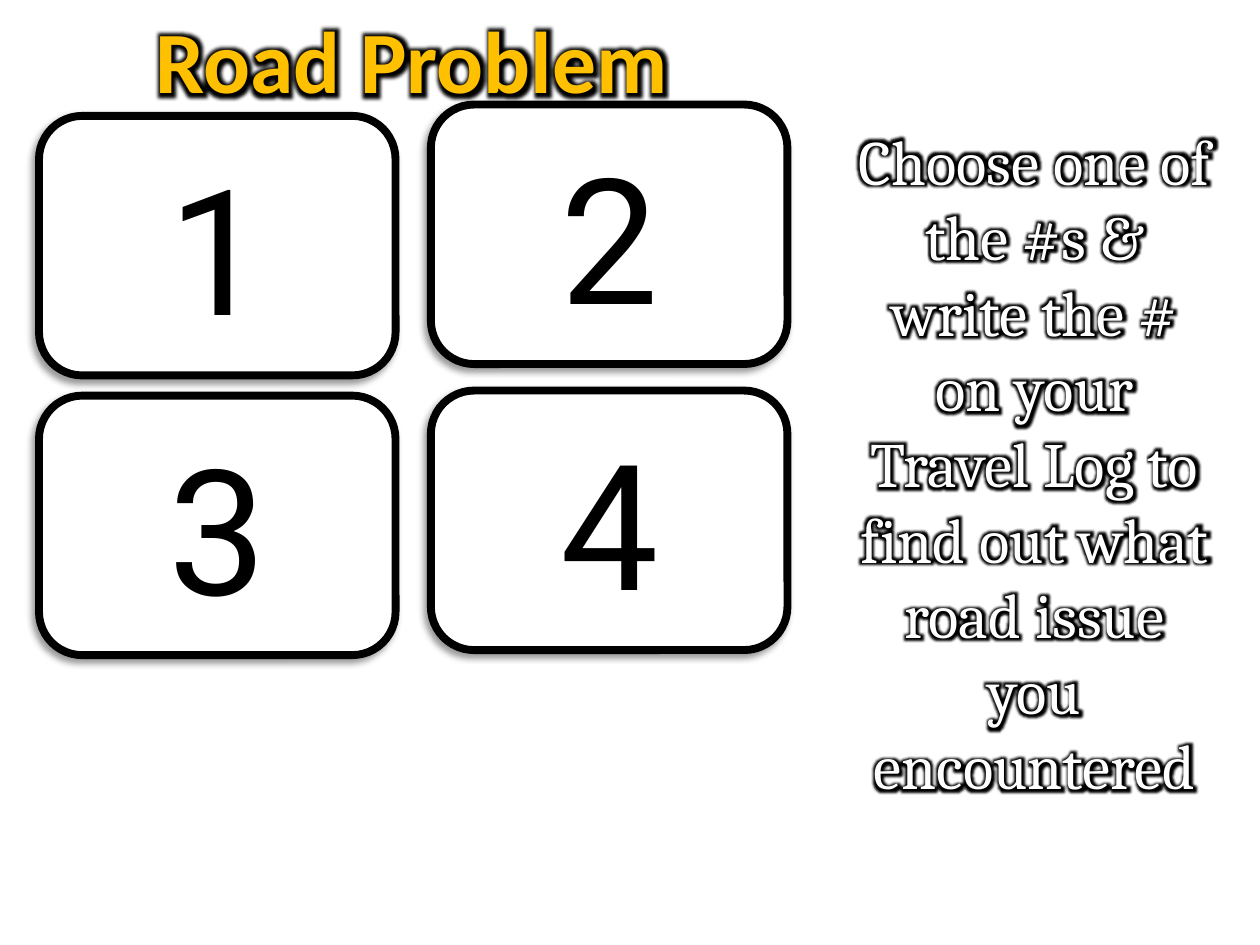
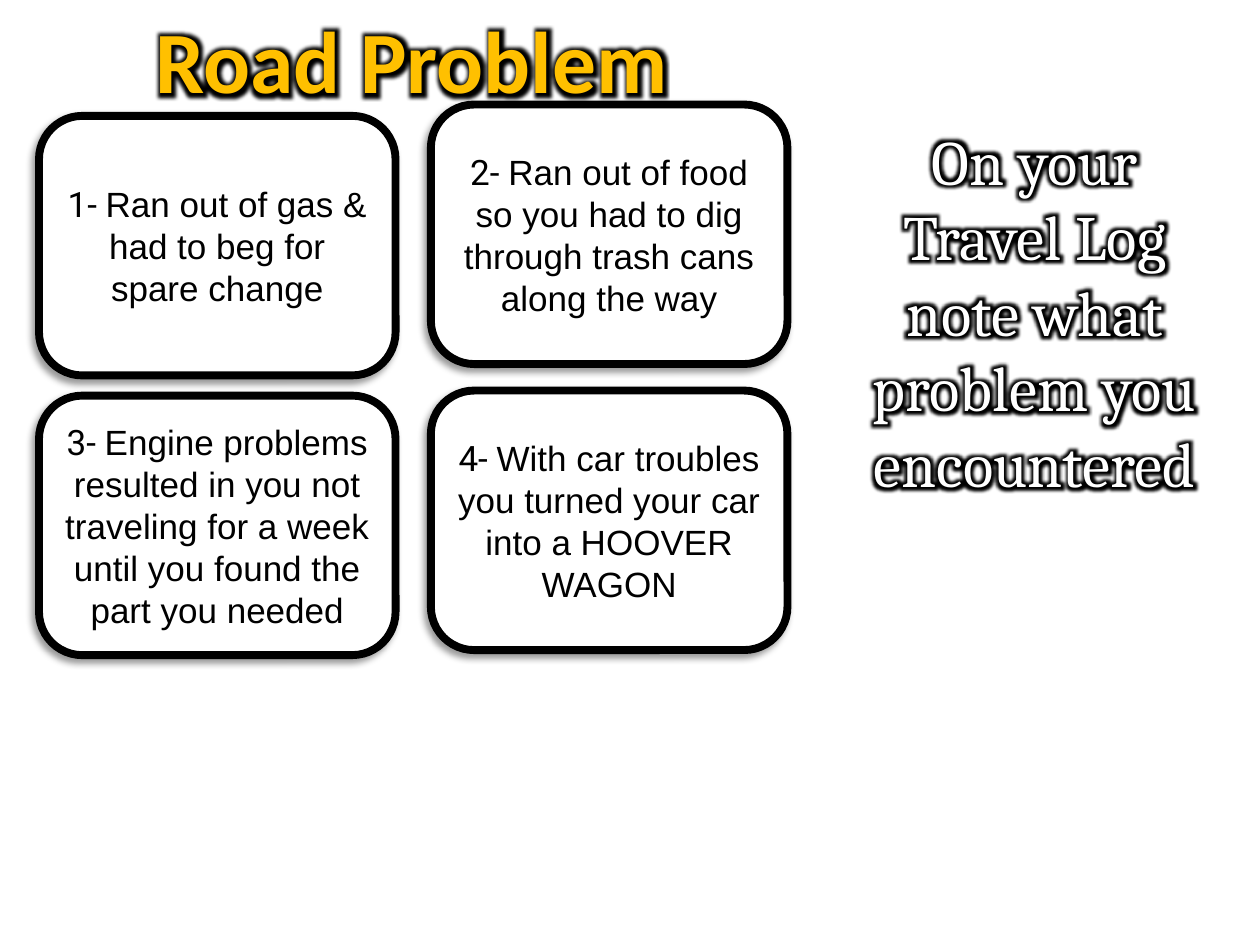
"""Build the two Road Problem slides: four cards and a side note on each."""
import pptx
import pptx.util
import pptx.dml.color
import pptx.enum.shapes
import pptx.enum.text
import pptx.oxml
import pptx.oxml.ns

TITLE = "Road Problem"
PAGES = [
    {
        "cards": [[(str(num), "Roboto")] for num in range(1, 5)],
        "size": 100,
        "note": "Choose one of the #s & write the # on your Travel Log "
                "to find out what road issue you encountered",
        "tall": 4.95,
    },
    {
        "cards": [[(f"{num}- ", "Roboto"), (text, "Arial")] for num, text in enumerate([
            "Ran out of gas & had to beg for spare change",
            "Ran out of food so you had to dig through trash cans along the way",
            "Engine problems resulted in you not traveling for a week "
            "until you found the part you needed",
            "With car troubles you turned your car into a HOOVER WAGON",
        ], 1)],
        "size": 20,
        "note": "On your Travel Log note what problem you encountered",
        "tall": 3.13,
    },
]

BLACK, WHITE, GOLD = "000000", "FFFFFF", "FFC000"
COLS = [0.31, 3.42]
ROWS = [[0.92, 0.83], [3.14, 3.1]]
CARD = (2.83, 2.06)
NOTE = (6.67, 0.92, 3.08)
HEAD = (0.79, 0, 4.96, 0.94)
GLOW = '<a:glow rad="101600">{}</a:glow>'
SHADE = '<a:outerShdw blurRad="50800" dist="38100" dir="8100000" rotWithShape="0">{}</a:outerShdw>'


def color(code):
    return pptx.dml.color.RGBColor.from_string(code)


def effect(form, alpha):
    ink = f'<a:srgbClr val="{BLACK}"><a:alpha val="{alpha * 1000}"/></a:srgbClr>'
    space = pptx.oxml.ns.nsdecls("a")
    return pptx.oxml.parse_xml(f"<a:effectLst {space}>{form.format(ink)}</a:effectLst>")


def place(shape, *box):
    shape.left, shape.top, shape.width, shape.height = map(pptx.util.Inches, box)


def write(shape, runs, size, code, bold=False, glow=False):
    para = shape.text_frame.paragraphs[0]
    para.alignment = pptx.enum.text.PP_ALIGN.CENTER
    for text, face in runs:
        run = para.add_run()
        run.text = text
        font = run.font
        font.size, font.name, font.bold = pptx.util.Pt(size), face, bold
        font.color.rgb = color(code)
        if glow:
            fill = run._r.rPr.find(pptx.oxml.ns.qn("a:solidFill"))
            fill.addnext(effect(GLOW, 100))


def fit(shape, wrap):
    frame = shape.text_frame
    frame.word_wrap = wrap
    frame.auto_size = pptx.enum.text.MSO_AUTO_SIZE.SHAPE_TO_FIT_TEXT
    frame.vertical_anchor = pptx.enum.text.MSO_ANCHOR.TOP


def add_card(slide, spot, runs, size):
    row, col = divmod(spot, len(COLS))
    box = map(pptx.util.Inches, (COLS[col], ROWS[row][col], *CARD))
    card = slide.shapes.add_shape(pptx.enum.shapes.MSO_SHAPE.ROUNDED_RECTANGLE, *box)
    card.fill.solid()
    card.fill.fore_color.rgb = color(WHITE)
    card.line.color.rgb = color(BLACK)
    card.line.width = pptx.util.Pt(4.5)
    card.element.spPr.append(effect(SHADE, 40))
    card.text_frame.word_wrap = True
    card.text_frame.vertical_anchor = pptx.enum.text.MSO_ANCHOR.MIDDLE
    write(card, runs, size, BLACK)


def add_page(deck, page):
    slide = deck.slides.add_slide(deck.slide_layouts[5])
    for spot, runs in enumerate(page["cards"]):
        add_card(slide, spot, runs, page["size"])
    note = slide.shapes.add_textbox(*map(pptx.util.Inches, (*NOTE, page["tall"])))
    fit(note, True)
    write(note, [(page["note"], "Cambria")], 36, WHITE, glow=True)
    head = slide.shapes.title
    place(head, *HEAD)
    fit(head, False)
    write(head, [(TITLE, "Calibri")], 50, GOLD, bold=True, glow=True)
    head.element.getparent().append(head.element)


def main():
    deck = pptx.Presentation()
    deck.slide_width, deck.slide_height = pptx.util.Inches(10), pptx.util.Inches(7.5)
    for page in PAGES:
        add_page(deck, page)
    deck.save("out.pptx")


if __name__ == "__main__":
    main()
